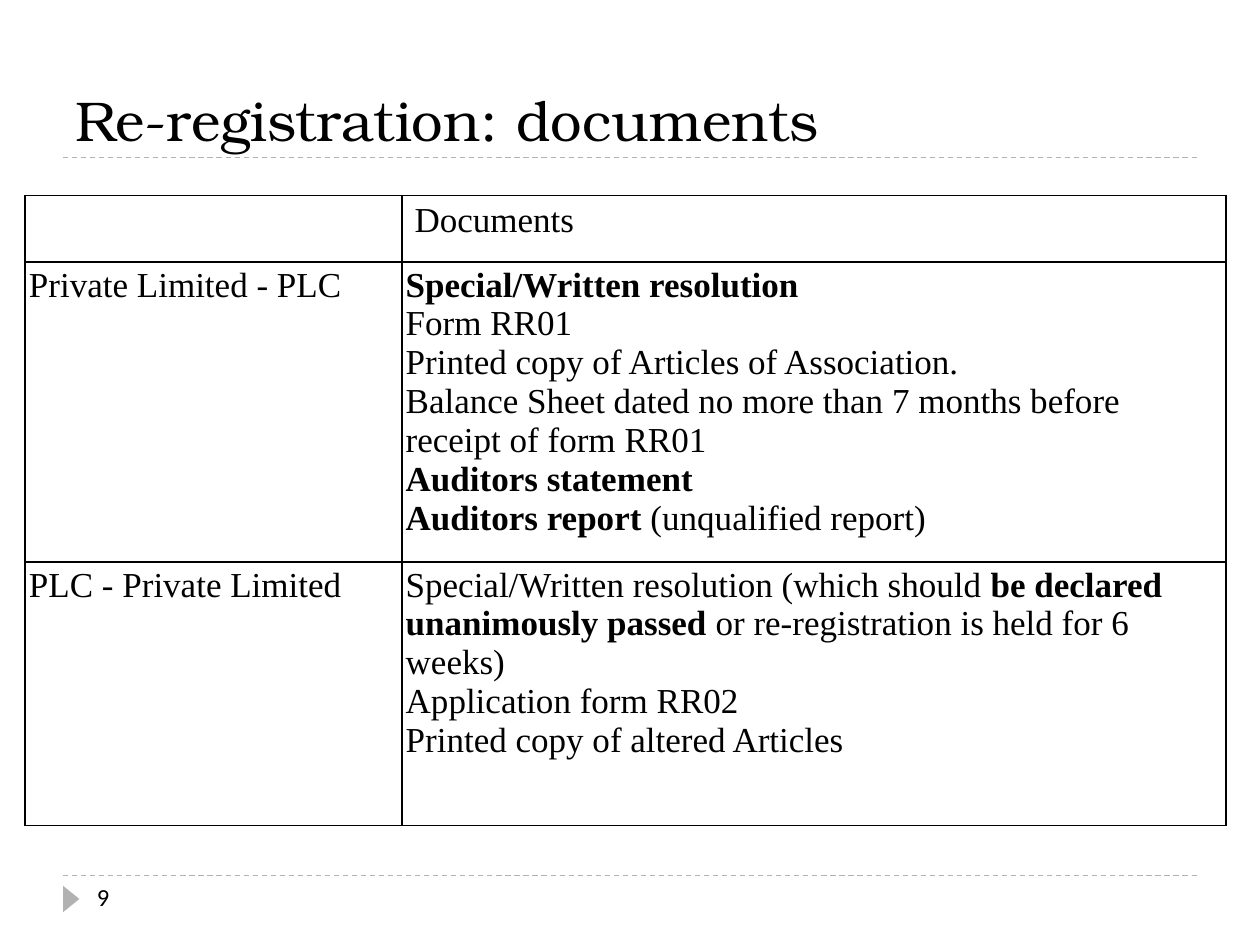
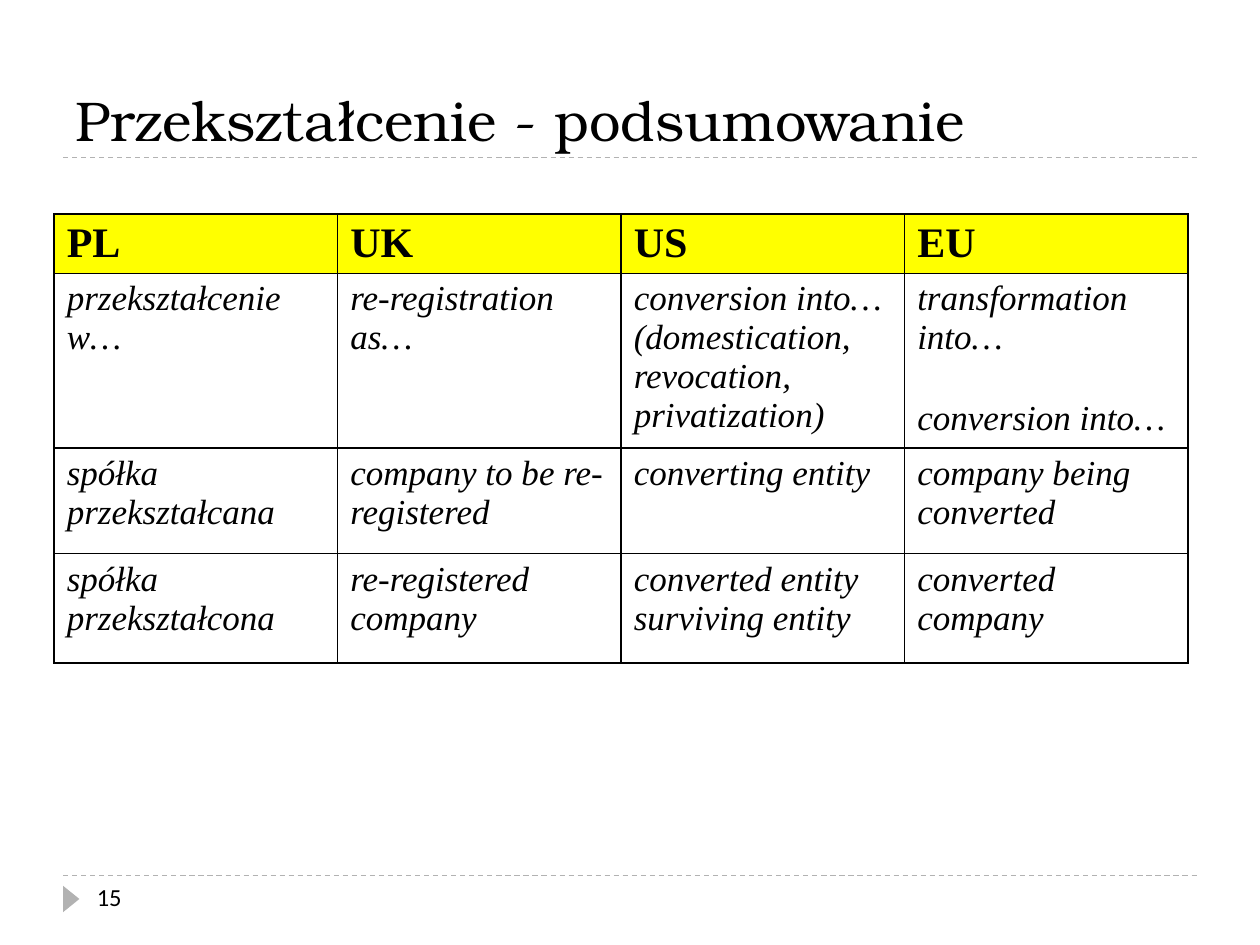
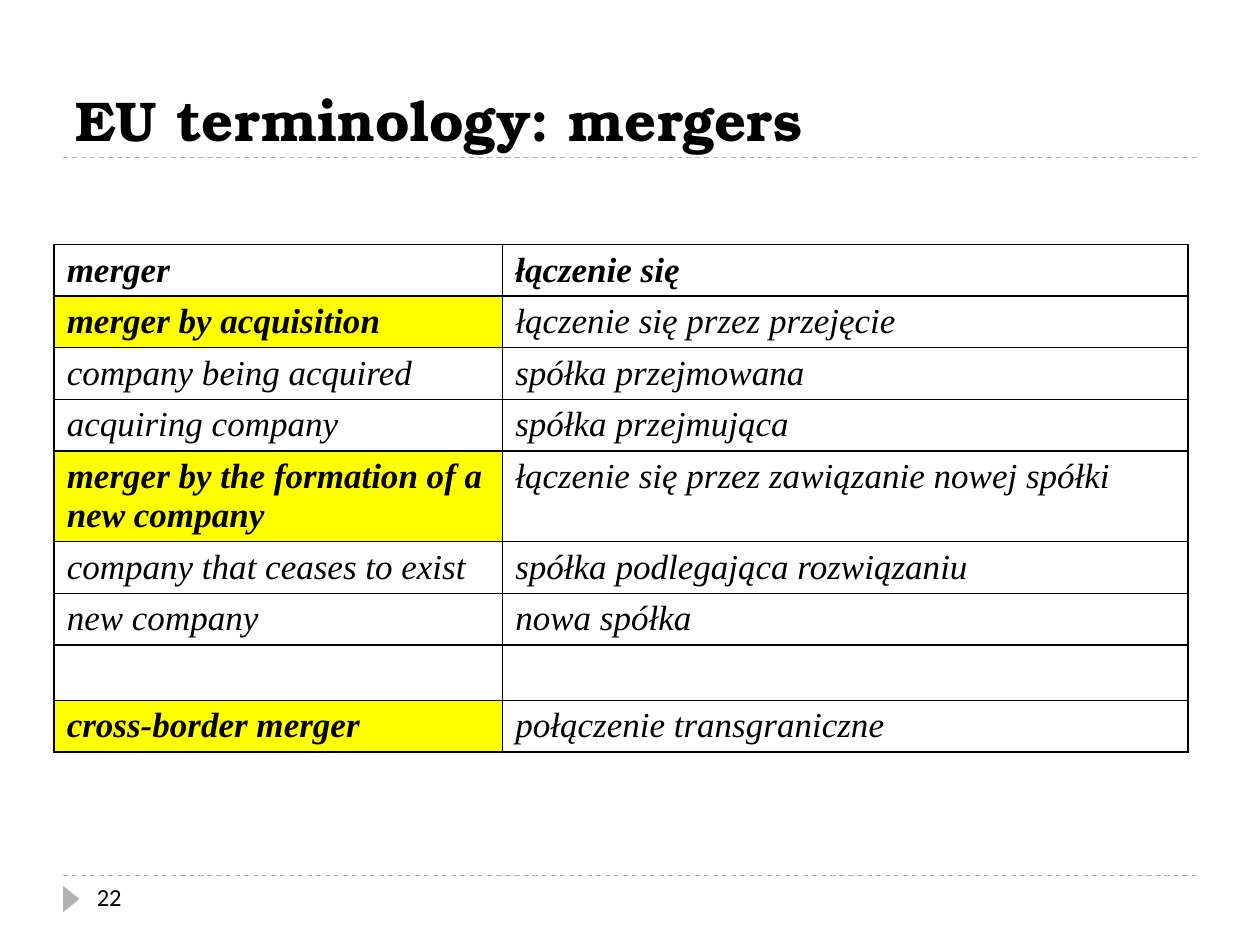
"""Build three slides of company law terms, each with one table."""
from lxml import etree
from pptx import Presentation
from pptx.dml.color import RGBColor
from pptx.enum.dml import MSO_LINE
from pptx.enum.shapes import MSO_CONNECTOR, MSO_SHAPE
from pptx.enum.text import MSO_ANCHOR, MSO_AUTO_SIZE, PP_ALIGN
from pptx.oxml.ns import qn
from pptx.util import Pt

SCALE = 9144
WIDE, HIGH = 1000, 750
TITLE_ONLY = 5
STRAIGHT = MSO_CONNECTOR.STRAIGHT
TRIANGLE = MSO_SHAPE.ISOSCELES_TRIANGLE
DASH = MSO_LINE.DASH
BOTTOM = MSO_ANCHOR.BOTTOM
LEFT = PP_ALIGN.LEFT
NO_FIT = MSO_AUTO_SIZE.NONE

COLORS = {"ink": "000000", "rule": "B2B2B2", "mark": "FFFF00", "paper": "FFFFFF"}
TITLE = {"name": "TeX Gyre Bonum", "size": Pt(32), "bold": False}
NUMBER = {"name": "Calibri", "size": Pt(14)}
BODY = {"name": "Times New Roman", "size": Pt(20)}
TERM = {**BODY, "italic": True}
HEAD = {**BODY, "size": Pt(24)}
SIDES = ("left", "top", "right")

PAPERS = [
    ["", "Documents"],
    ["Private Limited - PLC",
     "*Special/Written resolution*\nForm RR01\n"
     "Printed copy of Articles of Association.\n"
     "Balance Sheet dated no more than 7 months before receipt of form RR01\n"
     "*Auditors statement\nAuditors report *(unqualified report)"],
    ["PLC - Private Limited",
     "Special/Written resolution (which should *be declared unanimously passed *"
     "or re-registration is held for 6 weeks)\n"
     "Application form RR02\nPrinted copy of altered Articles"],
]
FORMS = [
    ["*PL*", "*UK*", "*US*", "*EU*"],
    ["przekształcenie w…", "re-registration as…",
     "conversion into…|(domestication, revocation, privatization)",
     "transformation into…|conversion into…"],
    ["spółka przekształcana", "company to be re-registered",
     "converting entity", "company being converted"],
    ["spółka przekształcona", "re-registered company",
     "converted entity|surviving entity", "converted company"],
]
MERGERS = [
    ["*merger*", "*łączenie się*"],
    ["*merger by acquisition*", "łączenie się przez przejęcie"],
    ["company being acquired", "spółka przejmowana"],
    ["acquiring company", "spółka przejmująca"],
    ["*merger by the formation of a new company*",
     "łączenie się przez zawiązanie nowej spółki"],
    ["company that ceases to exist", "spółka podlegająca rozwiązaniu"],
    ["new company", "nowa spółka"],
    ["", ""],
    ["*cross-border merger*", "połączenie transgraniczne"],
]


def px(*vals):
    """Turn px lengths into EMU."""
    return [val * SCALE for val in vals]


def rgb(name):
    """Look up a colour by name."""
    return RGBColor.from_string(COLORS[name])


def style(font, look):
    """Set font values and the ink colour."""
    for key, val in look.items():
        setattr(font, key, val)
    font.color.rgb = rgb("ink")


def add_rule(slide, y):
    """Draw a dashed rule across the slide."""
    rule = slide.shapes.add_connector(STRAIGHT, *px(50, y, 950, y))
    rule.line.color.rgb = rgb("rule")
    rule.line.width = Pt(0.75)
    rule.line.dash_style = DASH
    etree.SubElement(rule._element.spPr, qn("a:effectLst"))


def add_arrow(slide):
    """Draw the footer triangle, turned to the right."""
    arrow = slide.shapes.add_shape(TRIANGLE, *px(46, 707, 21, 13))
    arrow.rotation = 90
    arrow.shadow.inherit = False
    arrow.fill.solid()
    arrow.fill.fore_color.rgb = rgb("rule")
    arrow.line.fill.background()


def add_number(slide, num):
    """Write the page number in the footer."""
    box = slide.shapes.add_textbox(*px(67, 695, 217, 40))
    box.text_frame.word_wrap = True
    run = box.text_frame.paragraphs[0].add_run()
    run.text = str(num)
    style(run.font, NUMBER)


def set_title(slide, text, look):
    """Place and format the title placeholder."""
    title = slide.shapes.title
    title.left, title.top, title.width, title.height = px(50, 18, 900, 108)
    frame = title.text_frame
    frame.auto_size = NO_FIT
    frame.vertical_anchor = BOTTOM
    para = frame.paragraphs[0]
    para.alignment = LEFT
    run = para.add_run()
    run.text = text
    style(run.font, look)


def add_page(deck, num, text, look=TITLE):
    """Add a slide with its title, rules and footer."""
    slide = deck.slides.add_slide(deck.slide_layouts[TITLE_ONLY])
    for y in (695, 125):
        add_rule(slide, y)
    add_arrow(slide)
    set_title(slide, text, look)
    add_number(slide, num)
    return slide


def add_edges(cell):
    """Draw a thin line on each side of a cell."""
    props = cell._tc.get_or_add_tcPr()
    for side in ("lnL", "lnR", "lnT", "lnB"):
        edge = etree.SubElement(props, qn(f"a:{side}"), w=str(Pt(1)))
        fill = etree.SubElement(edge, qn("a:solidFill"))
        etree.SubElement(fill, qn("a:srgbClr"), val=COLORS["ink"])


def write(frame, text, look):
    """Write text: | parts paragraphs, * turns bold on and off."""
    for i, part in enumerate(text.split("|")):
        para = frame.add_paragraph() if i else frame.paragraphs[0]
        for j, span in enumerate(part.split("*")):
            for k, line in enumerate(span.split("\n")):
                if k:
                    para.add_line_break()
                if line:
                    run = para.add_run()
                    run.text = line
                    style(run.font, {**look, "bold": j % 2 == 1})


def add_grid(slide, spot, cols, rows, data, look, head=None, marks=()):
    """Add a ruled table with some marked cells."""
    area = px(*spot, sum(cols), sum(rows))
    grid = slide.shapes.add_table(len(rows), len(cols), *area).table
    grid.first_row = grid.horz_banding = False
    for col, wide in zip(grid.columns, px(*cols)):
        col.width = wide
    for r, (row, high) in enumerate(zip(grid.rows, px(*rows))):
        row.height = high
        for c, cell in enumerate(row.cells):
            add_edges(cell)
            cell.margin_bottom = 0
            if (r, c) in marks:
                cell.fill.solid()
                cell.fill.fore_color.rgb = rgb("mark")
            else:
                cell.fill.background()
            write(cell.text_frame, data[r][c], head if head and r == 0 else look)
    return grid


def main():
    """Build and save the deck."""
    deck = Presentation()
    deck.slide_width, deck.slide_height = px(WIDE, HIGH)
    back = deck.slide_master.background.fill
    back.solid()
    back.fore_color.rgb = rgb("paper")

    slide = add_page(deck, 9, "Re-registration: documents")
    grid = add_grid(slide, (20, 155), (299, 654), (53, 238, 209), PAPERS, BODY)
    for r in (1, 2):
        for c in (0, 1):
            for side in SIDES:
                setattr(grid.cell(r, c), f"margin_{side}", 3 * SCALE)

    slide = add_page(deck, 15, "Przekształcenie - podsumowanie")
    slide.shapes.title.text_frame.paragraphs[0].line_spacing = 1.5
    grid = add_grid(slide, (43, 170), [225] * 4, (47, 137, 84, 87), FORMS, TERM,
                    HEAD, [(0, c) for c in range(4)])
    grid.cell(1, 3).text_frame.paragraphs[1].space_before = Pt(24)

    slide = add_page(deck, 22, "EU terminology: mergers", {**TITLE, "bold": True})
    rows = [41] * 4 + [72, 41, 41, 44, 41]
    add_grid(slide, (43, 194), (356, 544), rows, MERGERS, TERM,
             marks=[(r, 0) for r in (1, 4, 8)])

    deck.save("out.pptx")


if __name__ == "__main__":
    main()
